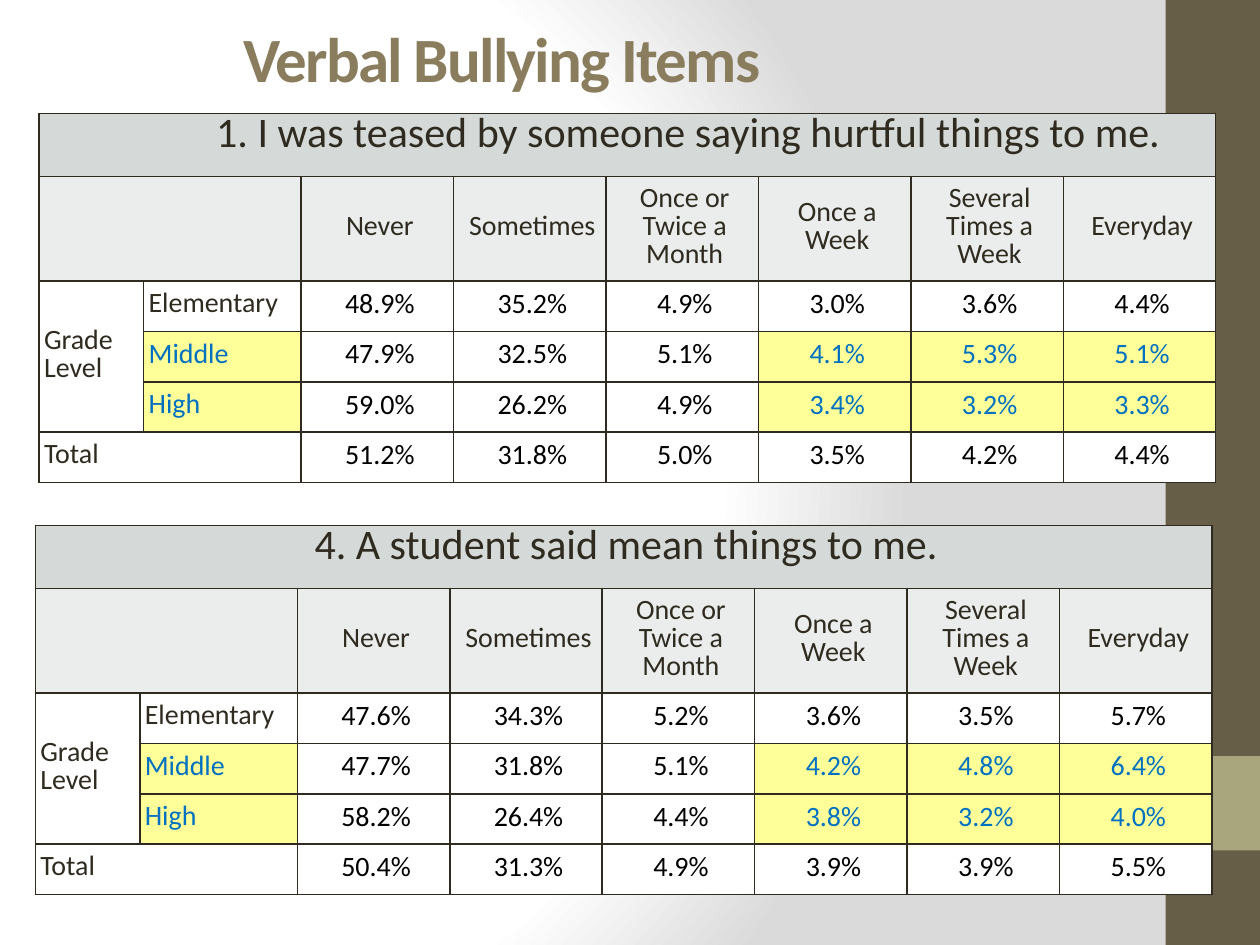
from dataclasses import dataclass

from lxml.etree import SubElement
from pptx import Presentation
from pptx.dml.color import RGBColor
from pptx.enum.shapes import MSO_SHAPE
from pptx.enum.text import MSO_ANCHOR, PP_ALIGN
from pptx.oxml import parse_xml
from pptx.oxml.ns import qn
from pptx.util import Inches, Pt

DRAW = "http://schemas.openxmlformats.org/drawingml/2006/main"


@dataclass(frozen=True)
class Theme:
    font: str = "Calibri"
    ink: str = "2F2B20"
    black: str = "000000"
    blue: str = "0070C0"
    tan: str = "897D5D"
    white: str = "FFFFFF"
    grey: str = "DADADA"
    band: str = "D5DAD8"
    head: str = "EAEDEB"
    mark: str = "FFFF99"
    brown: str = "675E47"
    olive: str = "A9A57C"
    title: int = 36
    item: int = 24
    body: int = 16
    line: int = 1


@dataclass(frozen=True)
class Item:
    text: str
    left: float
    top: float
    indent: float
    rows: tuple[str, ...]


THEME = Theme()
WIDE, HIGH = 10, 7.5
COLS = [0.83, 1.25] + [1.21] * 6
ROWS = [0.5, 0.83] + [0.4] * 4
HEADS = ("Never", "Sometimes", "Once or Twice a Month", "Once a Week",
         "Several Times a Week", "Everyday")
GRADES = ("Elementary", "Middle", "High", "Total")
MARKED = ("Middle", "High")
RARE = 3  # Middle and High answers from this column on are marked

ITEMS = (
    Item("1. I was teased by someone saying hurtful things to me. ",
         0.31, 0.9, 1.04,
         ("48.9% 35.2% 4.9% 3.0% 3.6% 4.4%",
          "47.9% 32.5% 5.1% 4.1% 5.3% 5.1%",
          "59.0% 26.2% 4.9% 3.4% 3.2% 3.3%",
          "51.2% 31.8% 5.0% 3.5% 4.2% 4.4%")),
    Item("4. A student said mean things to me.",
         0.28, 4.17, 0.04,
         ("47.6% 34.3% 5.2% 3.6% 3.5% 5.7%",
          "47.7% 31.8% 5.1% 4.2% 4.8% 6.4%",
          "58.2% 26.4% 4.4% 3.8% 3.2% 4.0%",
          "50.4% 31.3% 4.9% 3.9% 3.9% 5.5%")),
)


def write(frame, text: str, size: int = THEME.body, color: str = THEME.ink,
          bold: bool = False, align=PP_ALIGN.LEFT, lead: int | None = None,
          indent: float = 0, track: int = 0) -> None:
    para = frame.paragraphs[0]
    para.alignment = align
    if lead:
        para.line_spacing = Pt(lead)
    props = para._p.get_or_add_pPr()
    props.set("marL", str(Inches(indent)))
    props.set("indent", "0")
    run = para.add_run()
    run.text = text
    font = run.font
    font.name, font.size, font.bold = THEME.font, Pt(size), bold
    font.color.rgb = RGBColor.from_string(color)
    if track:
        run._r.get_or_add_rPr().set("spc", str(track * 100))


def paint(cell, fill: str) -> None:
    """Fill a cell and rule its four sides."""
    cell.fill.solid()
    cell.fill.fore_color.rgb = RGBColor.from_string(fill)
    props = cell._tc.get_or_add_tcPr()
    for spot, side in enumerate(("lnL", "lnR", "lnT", "lnB")):
        rule = parse_xml(
            f'<a:{side} xmlns:a="{DRAW}" w="{Pt(THEME.line)}"><a:solidFill>'
            f'<a:srgbClr val="{THEME.ink}"/></a:solidFill></a:{side}>')
        props.insert(spot, rule)


def fill_cell(cell, text: str, pad: float = 0, indent: float = 0.04,
              **form) -> None:
    cell.vertical_anchor = MSO_ANCHOR.MIDDLE
    cell.margin_left = cell.margin_right = cell.margin_top = Inches(pad)
    cell.margin_bottom = 0
    write(cell.text_frame, text, lead=16, indent=indent, **form)


def add_item(slide, item: Item) -> None:
    table = slide.shapes.add_table(
        len(ROWS), len(COLS), Inches(item.left), Inches(item.top),
        Inches(sum(COLS)), Inches(sum(ROWS))).table
    table.first_row = table.horz_banding = False
    for col, size in zip(table.columns, COLS):
        col.width = Inches(size)
    for row, size in zip(table.rows, ROWS):
        row.height = Inches(size)

    # Cell fills, with the marked answers and grade names
    last = len(ROWS) - 1
    for r in range(len(ROWS)):
        for c in range(len(COLS)):
            hot = (r > 1 and GRADES[r - 2] in MARKED
                   and (c == 1 or c >= 2 + RARE))
            base = (THEME.band, THEME.head)[r] if r < 2 else THEME.white
            paint(table.cell(r, c), THEME.mark if hot else base)

    # Joined cells: item, blank corner, grade level, total
    for start, end in (((0, 0), (0, 7)), ((1, 0), (1, 1)),
                       ((2, 0), (4, 0)), ((last, 0), (last, 1))):
        table.cell(*start).merge(table.cell(*end))

    # Headings
    fill_cell(table.cell(0, 0), item.text, indent=item.indent,
              size=THEME.item, align=PP_ALIGN.CENTER)
    for c, head in enumerate(HEADS, 2):
        fill_cell(table.cell(1, c), head, align=PP_ALIGN.CENTER)
    fill_cell(table.cell(2, 0), "Grade Level")

    # Grades and answers
    for r, (grade, row) in enumerate(zip(GRADES, item.rows), 2):
        hot = grade in MARKED
        fill_cell(table.cell(r, 0 if grade == "Total" else 1), grade,
                  color=THEME.blue if hot else THEME.ink)
        for c, value in enumerate(row.split()):
            fill_cell(table.cell(r, c + 2), value, pad=0.01,
                      align=PP_ALIGN.CENTER,
                      color=THEME.blue if hot and c >= RARE else THEME.black)


def add_bar(slide, top: float, high: float, fill: str) -> None:
    """Draw a block on the right edge; top and high are shares of the slide."""
    wide = 0.075 * WIDE
    bar = slide.shapes.add_shape(
        MSO_SHAPE.RECTANGLE, Inches(WIDE - wide), Inches(top * HIGH),
        Inches(wide), Inches(high * HIGH))
    bar.shadow.inherit = False
    bar.fill.solid()
    bar.fill.fore_color.rgb = RGBColor.from_string(fill)
    bar.line.fill.background()


def set_back(slide) -> None:
    """Lay a round gradient behind the slide."""
    fill = slide.background.fill
    fill.gradient()
    grad = slide.element.find(".//" + qn("a:gradFill"))
    for child in list(grad):
        grad.remove(child)
    stops = SubElement(grad, qn("a:gsLst"))
    for at, color in ((0, THEME.white), (75, THEME.white), (100, THEME.grey)):
        stop = SubElement(stops, qn("a:gs"), pos=str(at * 1000))
        SubElement(stop, qn("a:srgbClr"), val=color)
    path = SubElement(grad, qn("a:path"), path="circle")
    SubElement(path, qn("a:fillToRect"), l="20000", t="50000",
               r="100000", b="50000")


def main() -> None:
    deck = Presentation()
    deck.slide_width, deck.slide_height = Inches(WIDE), Inches(HIGH)
    slide = deck.slides.add_slide(deck.slide_layouts[5])

    # Background and edge blocks
    set_back(slide)
    add_bar(slide, 0, 1, THEME.brown)
    add_bar(slide, 0.8, 0.1, THEME.olive)

    # Title, in front of the blocks
    title = slide.shapes.title
    slide.shapes.element.append(title.element)
    title.left, title.top = Inches(1.83), Inches(0.08)
    title.width, title.height = Inches(7.59), Inches(0.75)
    title.text_frame.vertical_anchor = MSO_ANCHOR.MIDDLE
    write(title.text_frame, "Verbal Bullying Items", size=THEME.title,
          color=THEME.tan, bold=True, track=-1)

    # Survey items
    for item in ITEMS:
        add_item(slide, item)
    deck.save("out.pptx")


if __name__ == "__main__":
    main()
